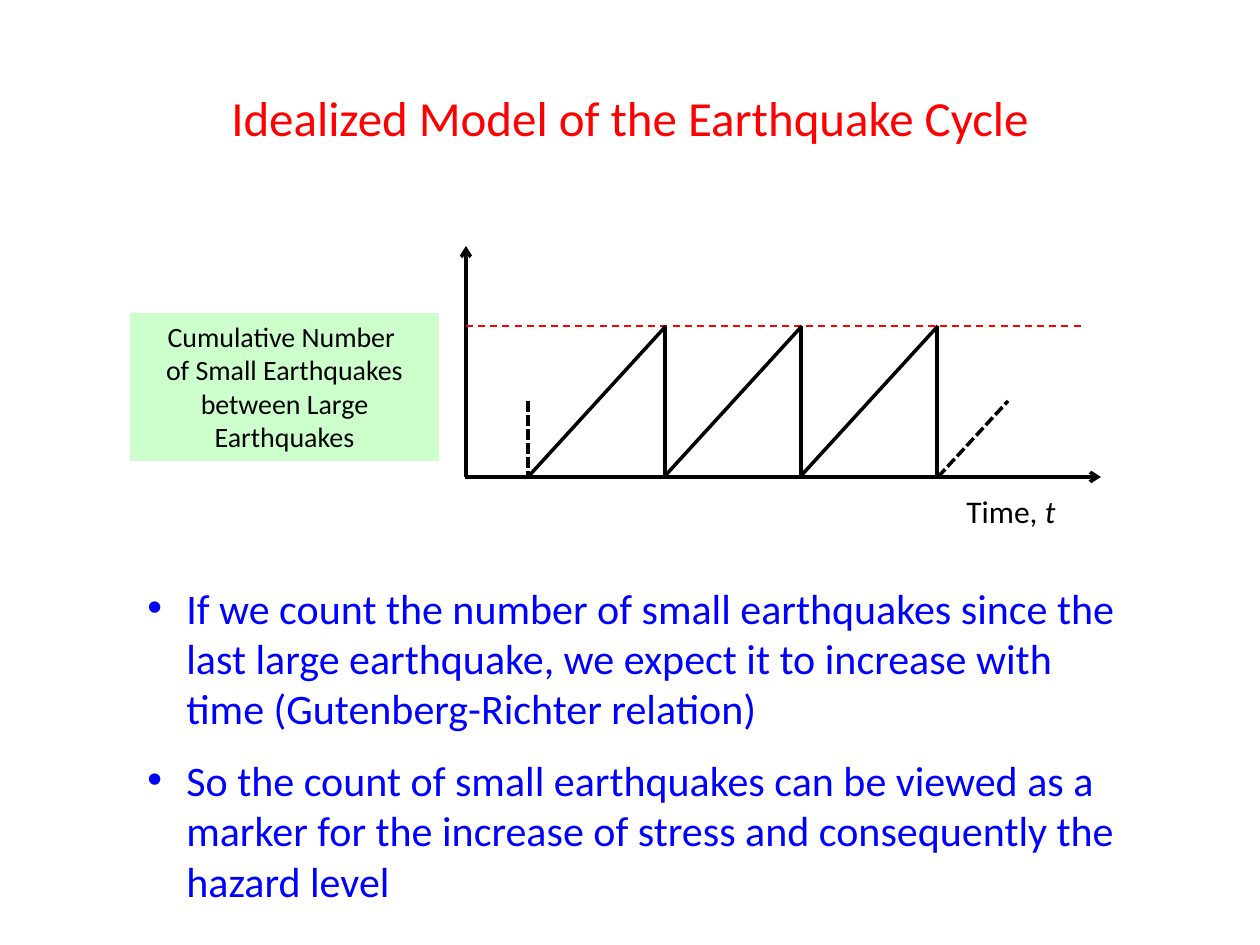
import pptx
import pptx.dml.color
import pptx.enum.dml
import pptx.enum.shapes
import pptx.enum.text
import pptx.oxml
import pptx.oxml.ns
import pptx.util

RGB = pptx.dml.color.RGBColor
BLACK = RGB(0x00, 0x00, 0x00)
RED = RGB(0xFF, 0x00, 0x00)
BLUE = RGB(0x00, 0x00, 0xFF)
PALE_GREEN = RGB(0xCC, 0xFF, 0xCC)

DASH = pptx.enum.dml.MSO_LINE.DASH
SHORT_DASH = pptx.enum.dml.MSO_LINE.SQUARE_DOT
LEFT = pptx.enum.text.PP_ALIGN.LEFT
CENTER = pptx.enum.text.PP_ALIGN.CENTER
TOP = pptx.enum.text.MSO_ANCHOR.TOP
MIDDLE = pptx.enum.text.MSO_ANCHOR.MIDDLE
FONT = "Calibri"
PX_PER_INCH = 126


def emu(px):
    return pptx.util.Emu(round(px * 914400 / PX_PER_INCH))


def element(tag, **attributes):
    node = pptx.oxml.parse_xml(f"<{tag} {pptx.oxml.ns.nsdecls('a')}/>")
    for key, value in attributes.items():
        node.set(key, value)
    return node


class Painter:
    """Holds the text style and the current page."""

    def __init__(self, page):
        self.page = page

    def fill_text(self, box, lines, size, color, align=LEFT, anchor=TOP, bullet_indent=0, space_after=0):
        frame = box.text_frame
        frame.word_wrap = True
        frame.vertical_anchor = anchor
        frame.text = "\n".join(lines)
        for para in frame.paragraphs:
            para.alignment = align
            if space_after:
                para.space_after = pptx.util.Pt(space_after)
            if bullet_indent:
                properties = para._p.get_or_add_pPr()
                properties.set("marL", str(emu(bullet_indent)))
                properties.set("indent", str(-emu(bullet_indent)))
                properties.append(element("a:buFont", typeface="Arial"))
                properties.append(element("a:buChar", char="•"))
            for span in para.runs:
                self.style(span, size, color)
        return box

    def style(self, span, size, color):
        span.font.name = FONT
        span.font.size = pptx.util.Pt(size)
        span.font.color.rgb = color

    def text(self, left, top, width, height, lines, size, color, **layout):
        box = self.page.shapes.add_textbox(emu(left), emu(top), emu(width), emu(height))
        return self.fill_text(box, lines, size, color, **layout)

    def panel(self, left, top, width, height, fill, lines, size, color, **layout):
        box = self.page.shapes.add_shape(
            pptx.enum.shapes.MSO_SHAPE.RECTANGLE, emu(left), emu(top), emu(width), emu(height))
        box.shadow.inherit = False
        box.fill.solid()
        box.fill.fore_color.rgb = fill
        box.line.fill.background()
        return self.fill_text(box, lines, size, color, **layout)

    def line(self, x1, y1, x2, y2, color=BLACK, weight=2, dash=None, arrow=False):
        line = self.page.shapes.add_connector(
            pptx.enum.shapes.MSO_CONNECTOR.STRAIGHT, emu(x1), emu(y1), emu(x2), emu(y2))
        line.line.color.rgb = color
        line.line.width = pptx.util.Pt(weight)
        if dash:
            line.line.dash_style = dash
        if arrow:
            line.line._get_or_add_ln().append(element("a:tailEnd", type="arrow"))
        line._element.spPr.append(element("a:effectLst"))


def main():
    deck = pptx.Presentation()
    deck.slide_width, deck.slide_height = emu(1260), emu(945)
    painter = Painter(deck.slides.add_slide(deck.slide_layouts[6]))

    # Title
    painter.text(63, 38, 1134, 157, ["Idealized Model of the Earthquake Cycle"],
                 28, RED, align=CENTER, anchor=MIDDLE)

    # Axes and the level at which a large earthquake happens
    origin, base, peak = 466, 477, 326
    painter.line(origin, base, origin, 246, arrow=True)
    painter.line(origin - 1, base, 1101, base, arrow=True)
    painter.line(origin, peak, 1085, peak, color=RED, weight=1, dash=DASH)

    # Sawtooth cycles, with a partial one at either end
    start, period, cycles, partial_top = 528, 136, 3, 401
    painter.line(start, partial_top, start, base, dash=SHORT_DASH)
    for cycle in range(cycles):
        left = start + cycle * period
        right = left + period
        painter.line(left, base, right + 2, peak)
        painter.line(right + 1, peak, right + 1, base)
    end = start + cycles * period + 2
    painter.line(end, base, end + 70, partial_top, dash=SHORT_DASH)

    # Axis labels
    time_label = painter.text(954, 486, 147, 52, ["Time, "], 18, BLACK)
    symbol = time_label.text_frame.paragraphs[0].add_run()
    symbol.text = "t"
    painter.style(symbol, 18, BLACK)
    symbol.font.italic = True
    painter.panel(130, 313, 309, 148, PALE_GREEN,
                  ["Cumulative Number ", "of Small Earthquakes", "between Large Earthquakes"],
                  16, BLACK, align=CENTER)

    # Explanation
    painter.text(135, 576, 1017, 339, [
        "If we count the number of small earthquakes since the last large earthquake, "
        "we expect it to increase with time (Gutenberg-Richter relation)",
        "So the count of small earthquakes can be viewed as a marker for the increase "
        "of stress and consequently the hazard level",
    ], 24, BLUE, bullet_indent=39, space_after=12)

    deck.save("out.pptx")


if __name__ == "__main__":
    main()
